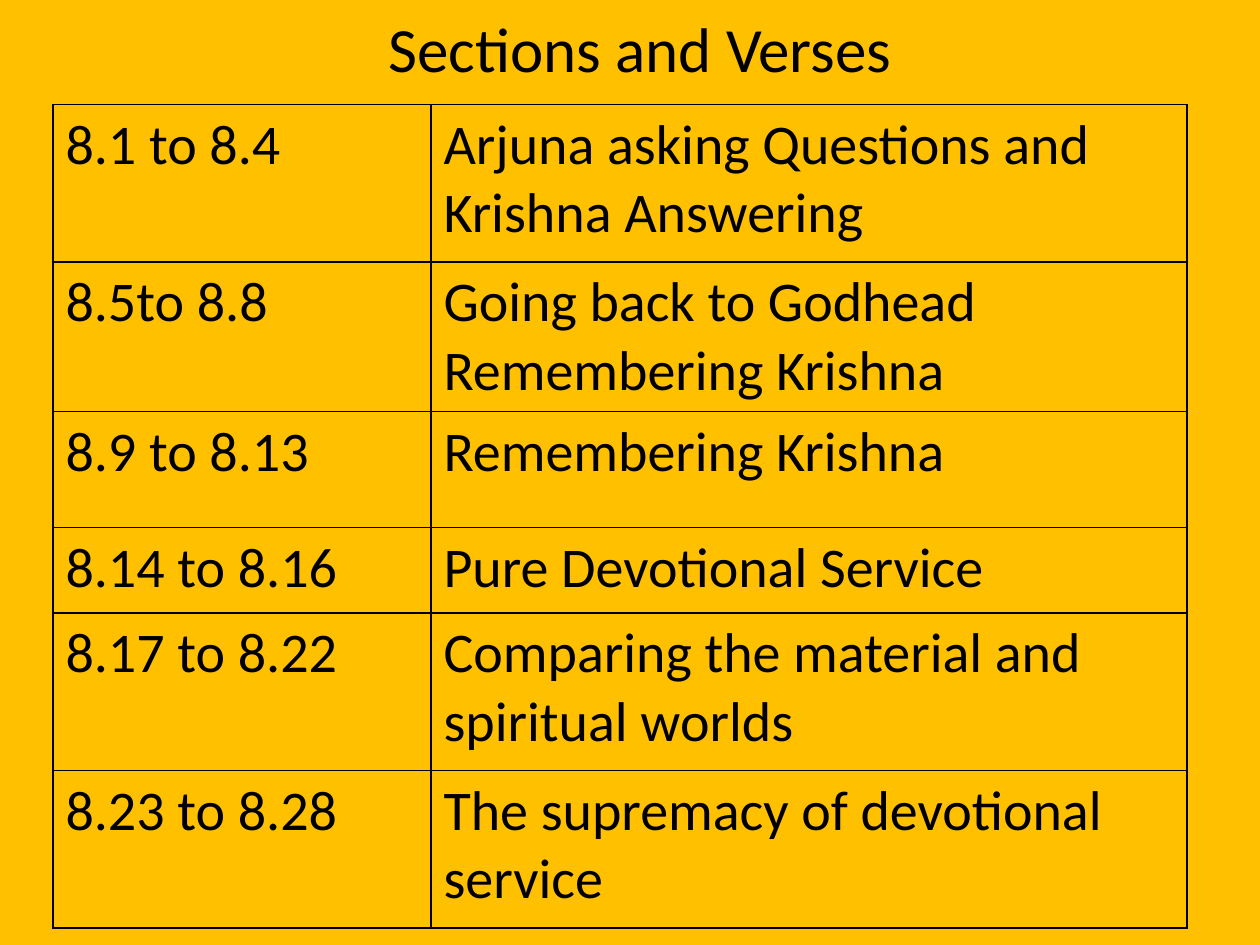
from typing import NamedTuple

from lxml import etree
from pptx import Presentation
from pptx.dml.color import RGBColor
from pptx.enum.text import MSO_ANCHOR, PP_ALIGN
from pptx.oxml.ns import qn
from pptx.util import Inches, Pt

LEFT, CENTER = PP_ALIGN.LEFT, PP_ALIGN.CENTER
TOP, MIDDLE = MSO_ANCHOR.TOP, MSO_ANCHOR.MIDDLE
GOLD, BLACK = "FFC000", "000000"
FONT = "Calibri"
COLS = (3, 6)


class Section(NamedTuple):
    verses: str
    theme: str
    height: float


SECTIONS = (
    Section("8.1 to 8.4", "Arjuna asking Questions and Krishna Answering", 1.25),
    Section("8.5to 8.8", "Going back to Godhead Remembering Krishna", 1.18),
    Section("8.9 to 8.13", "Remembering Krishna", 0.92),
    Section("8.14 to 8.16", "Pure Devotional Service", 0.68),
    Section("8.17 to 8.22", "Comparing the material and spiritual worlds", 1.25),
    Section("8.23 to 8.28", "The supremacy of devotional service", 1.25),
)


def paint(color, value: str) -> None:
    color.rgb = RGBColor.from_string(value)


def write(frame, text: str, *, size: float, align=LEFT, color: str = BLACK) -> None:
    frame.word_wrap = True
    para = frame.paragraphs[0]
    para.alignment = align
    run = para.add_run()
    run.text = text
    run.font.name = FONT
    run.font.size = Pt(size)
    paint(run.font.color, color)


def rule(cell, color: str = BLACK, width: float = 1) -> None:
    """Draw a line on all four sides of a cell."""
    props = cell._tc.get_or_add_tcPr()
    for spot, side in enumerate(("lnL", "lnR", "lnT", "lnB")):
        line = etree.Element(qn(f"a:{side}"), w=str(Pt(width)))
        fill = etree.SubElement(line, qn("a:solidFill"))
        etree.SubElement(fill, qn("a:srgbClr"), val=color)
        props.insert(spot, line)


def add_title(slide, text: str) -> None:
    title = slide.shapes.title
    title.left, title.top = Inches(0.58), 0
    title.width, title.height = Inches(9), Inches(0.75)
    title.text_frame.vertical_anchor = MIDDLE
    write(title.text_frame, text, size=36, align=CENTER)


def add_grid(slide, rows: tuple[Section, ...]) -> None:
    high = sum(row.height for row in rows)
    table = slide.shapes.add_table(
        len(rows), len(COLS), Inches(0.42), Inches(0.83),
        Inches(sum(COLS)), Inches(high)).table
    table.first_row = table.horz_banding = False
    for col, width in zip(table.columns, COLS):
        col.width = Inches(width)
    for line, row in zip(table.rows, rows):
        line.height = Inches(row.height)
        for cell, text in zip(line.cells, (row.verses, row.theme)):
            cell.fill.background()
            cell.vertical_anchor = TOP
            write(cell.text_frame, text, size=32)
            rule(cell)


def main() -> None:
    deck = Presentation()
    deck.slide_width, deck.slide_height = Inches(10), Inches(7.5)
    slide = deck.slides.add_slide(deck.slide_layouts.get_by_name("Title Only"))
    ground = slide.background.fill
    ground.solid()
    paint(ground.fore_color, GOLD)
    add_title(slide, "Sections and Verses")
    add_grid(slide, SECTIONS)
    deck.save("out.pptx")


if __name__ == "__main__":
    main()
